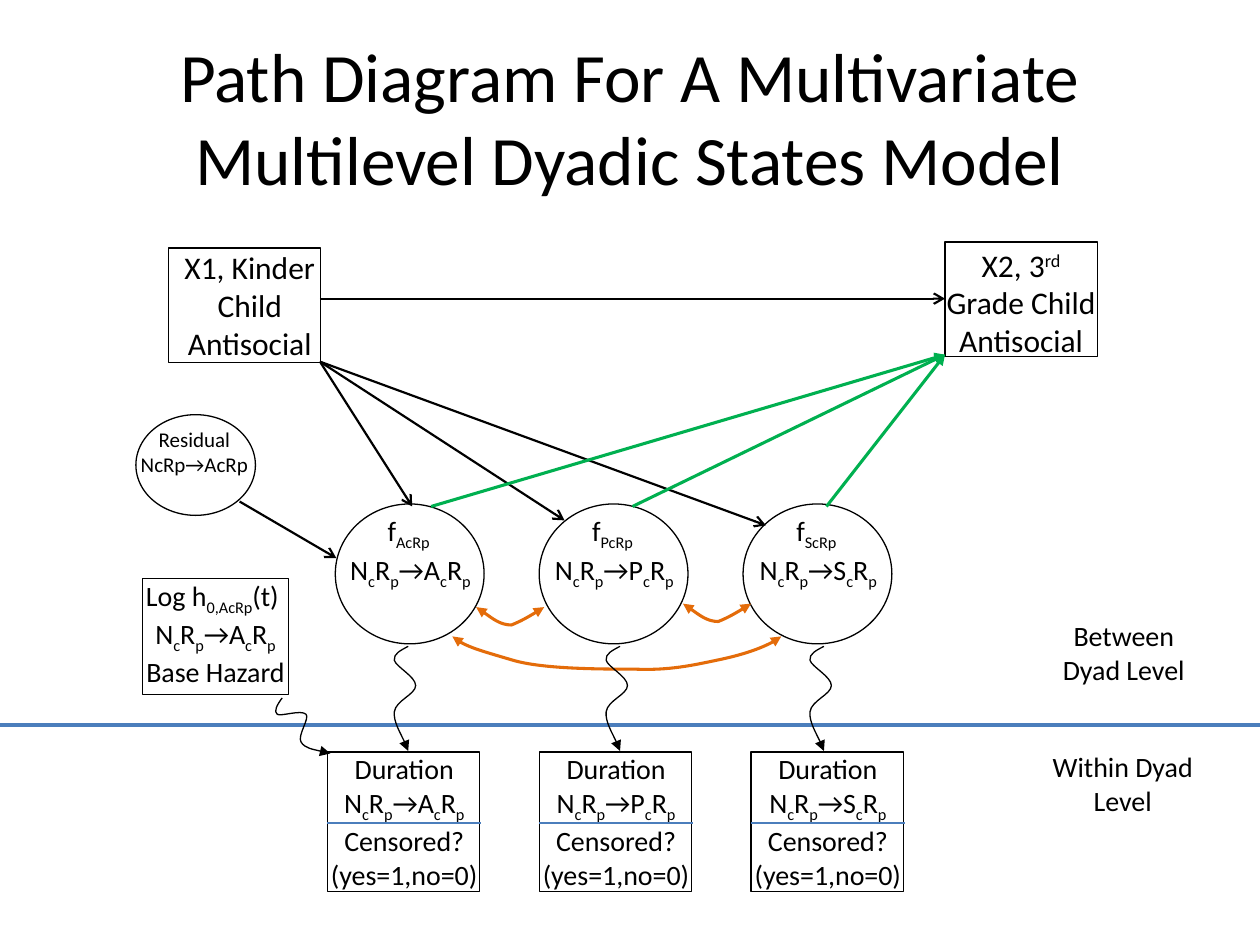
from lxml.etree import SubElement
from pptx import Presentation
from pptx.dml.color import RGBColor
from pptx.enum.shapes import MSO_CONNECTOR, MSO_SHAPE
from pptx.enum.text import MSO_ANCHOR, PP_ALIGN
from pptx.oxml.ns import qn
from pptx.util import Cm, Pt

COLORS = {
    "ink": "000000",
    "paper": "FFFFFF",
    "level": "4B7EBC",
    "effect": "00B050",
    "covariance": "E46C0A",
}
STATES = ("A", "P", "S")

# Bezier control points, in cm from the start of each curve
WAVE = [(-0.15, 0.08), (-0.3, 0.15), (-0.28, 0.28), (-0.25, 0.41), (0.15, 0.61), (0.15, 0.79),
        (0.15, 0.97), (-0.25, 1.09), (-0.28, 1.32), (-0.3, 1.52), (-0.03, 1.98), (0, 2.11)]
HAZARD_WAVE = [(-0.1, 0.13), (-0.18, 0.28), (-0.1, 0.33), (-0.03, 0.38), (0.38, 0.23), (0.48, 0.33),
               (0.56, 0.41), (0.3, 0.76), (0.38, 0.89), (0.46, 1.02), (0.86, 1.09), (0.97, 1.12)]
SHORT_ARC = [(-0.15, 0.1), (-0.46, 0.28), (-0.66, 0.36), (-0.89, 0.36), (-1.22, 0.1), (-1.37, 0)]
LONG_ARC = [(-0.2, 0.18), (-0.81, 0.38), (-1.3, 0.48), (-1.78, 0.58), (-2.26, 0.69), (-2.95, 0.66),
            (-3.63, 0.66), (-4.8, 0.66), (-5.41, 0.48), (-6.02, 0.3), (-6.45, 0.18), (-6.63, 0)]


def write_text(frame, text, size=16, baseline=-25, anchor=MSO_ANCHOR.TOP, inset=0):
    """Newlines part paragraphs; every second piece between bars is raised or lowered."""
    frame.word_wrap = True
    frame.vertical_anchor = anchor
    frame.margin_left = frame.margin_right = Cm(inset)
    frame.margin_top = frame.margin_bottom = Cm(inset / 2)
    for number, line in enumerate(text.split("\n")):
        paragraph = frame.add_paragraph() if number else frame.paragraphs[0]
        paragraph.alignment = PP_ALIGN.CENTER
        for index, piece in enumerate(line.split("|")):
            if not piece:
                continue
            run = paragraph.add_run()
            run.text = piece
            run.font.name = "Calibri"
            run.font.size = Pt(size)
            run.font.color.rgb = RGBColor.from_string(COLORS["ink"])
            if index % 2:
                run._r.get_or_add_rPr().set("baseline", str(baseline * 1000))


class Diagram:
    """Draws on one slide; all places are in cm."""

    def __init__(self, slide):
        self.slide = slide
        self.shapes = slide.shapes

    def stroke(self, line, color, width, head=None, tail=None):
        line.color.rgb = RGBColor.from_string(COLORS[color])
        line.width = Pt(width)
        for tag, kind in (("a:headEnd", head), ("a:tailEnd", tail)):
            if kind:
                SubElement(line._get_or_add_ln(), qn(tag), type=kind)

    def text(self, text, *place, **text_format):
        box = self.shapes.add_textbox(*map(Cm, place))
        write_text(box.text_frame, text, **text_format)

    def node(self, kind, *place, filled=True):
        shape = self.shapes.add_shape(kind, *map(Cm, place))
        shape.shadow.inherit = False
        if filled:
            shape.fill.solid()
            shape.fill.fore_color.rgb = RGBColor.from_string(COLORS["paper"])
        else:
            shape.fill.background()
        self.stroke(shape.line, "ink", 0.75)
        return shape

    def line(self, start, end, color="ink", width=1.25, head=None, tail=None):
        connector = self.shapes.add_connector(MSO_CONNECTOR.STRAIGHT, *map(Cm, start + end))
        self.stroke(connector.line, color, width, head, tail)
        SubElement(connector._element.spPr, qn("a:effectLst"))

    def curve(self, start, offsets, color="ink", width=0.75, head=None):
        """Build a polyline through all control points, then group each three into a Bezier."""
        x, y = start
        builder = self.shapes.build_freeform(Cm(x), Cm(y))
        builder.add_line_segments([(Cm(x + dx), Cm(y + dy)) for dx, dy in offsets], close=False)
        shape = builder.convert_to_shape()
        segments = list(shape._element.iter(qn("a:lnTo")))
        path = segments[0].getparent()
        for first in range(0, len(segments), 3):
            bezier = SubElement(path, qn("a:cubicBezTo"))
            for segment in segments[first:first + 3]:
                bezier.append(segment[0])
                path.remove(segment)
        shape.shadow.inherit = False
        shape.fill.background()
        self.stroke(shape.line, color, width, head, "triangle")


def transition(state):
    return f"N|c|R|p|→{state}|c|R|p"


def draw_nodes(diagram):
    diagram.node(MSO_SHAPE.RECTANGLE, 3.4, 5, 3.07, 2.31)
    diagram.text("X1, Kinder Child Antisocial", 3.56, 5, 2.95, 2.13, size=18)
    diagram.node(MSO_SHAPE.RECTANGLE, 19.05, 4.88, 3.07, 2.31)
    diagram.text("X2, 3|rd| Grade Child Antisocial", 19.05, 4.95, 3.07, 2.13, size=18, baseline=30)

    for column, state in enumerate(STATES):
        factor_left = 6.76 + 4.11 * column
        diagram.node(MSO_SHAPE.OVAL, factor_left, 10.16, 3, 2.82)
        diagram.text(f"f|{state}cRp \n{transition(state)}", factor_left + 0.04, 10.36, 2.95, 2.21)

        duration_left = 6.6 + 4.27 * column
        diagram.node(MSO_SHAPE.RECTANGLE, duration_left, 15.16, 3.07, 2.82)
        diagram.text(f"Duration\n{transition(state)}\nCensored?\n(yes=1,no=0)",
                     duration_left, 15.16, 3.1, 2.82)
        diagram.line((duration_left, 16.59), (duration_left + 3.1, 16.59), "level", 1.5)

    diagram.node(MSO_SHAPE.OVAL, 2.74, 8.36, 2.41, 2.03)
    diagram.text("Residual NcRp→AcRp", 2.74, 8.59, 2.36, 1.04, size=12)
    hazard = diagram.node(MSO_SHAPE.RECTANGLE, 2.87, 11.66, 2.95, 2.34, filled=False)
    write_text(hazard.text_frame, f"Log h|0,AcRp|(t) \n{transition('A')}\nBase Hazard")


def draw_paths(diagram):
    diagram.line((6.45, 6.02), (19.05, 6.02), tail="arrow")
    for end in ((8.31, 10.21), (11.38, 10.49), (15.44, 10.59)):
        diagram.line((6.45, 7.29), end, tail="arrow")
    for factor_x in (8.69, 12.75, 16.66):
        diagram.line((19.05, 7.15), (factor_x, 10.21), "effect", 1.75, head="triangle")
    diagram.line((4.83, 10.11), (6.78, 11.25), tail="arrow")

    for start, arc in (((15.75, 12.83), LONG_ARC), ((15.14, 12.17), SHORT_ARC),
                       ((10.97, 12.24), SHORT_ARC)):
        diagram.curve(start, arc, "covariance", 1.75, head="triangle")
    for wave_x in (8.23, 12.5, 16.61):
        diagram.curve((wave_x, 13.03), WAVE)
    diagram.curve((5.69, 14.07), HAZARD_WAVE)


def main():
    presentation = Presentation()
    presentation.slide_width, presentation.slide_height = Cm(25.4), Cm(19.05)
    diagram = Diagram(presentation.slides.add_slide(presentation.slide_layouts[6]))
    diagram.text("Path Diagram For A Multivariate Multilevel Dyadic States Model",
                 1.27, 0.76, 22.86, 3.18, size=39.6, anchor=MSO_ANCHOR.MIDDLE, inset=0.25)
    diagram.line((0, 14.61), (25.4, 14.61), "level", 2.25)
    diagram.text("Within Dyad Level", 21.16, 15.11, 2.95, 1.63)
    diagram.text("Between Dyad Level", 21.18, 12.47, 2.95, 1.63)
    draw_nodes(diagram)
    draw_paths(diagram)
    presentation.save("out.pptx")


if __name__ == "__main__":
    main()
